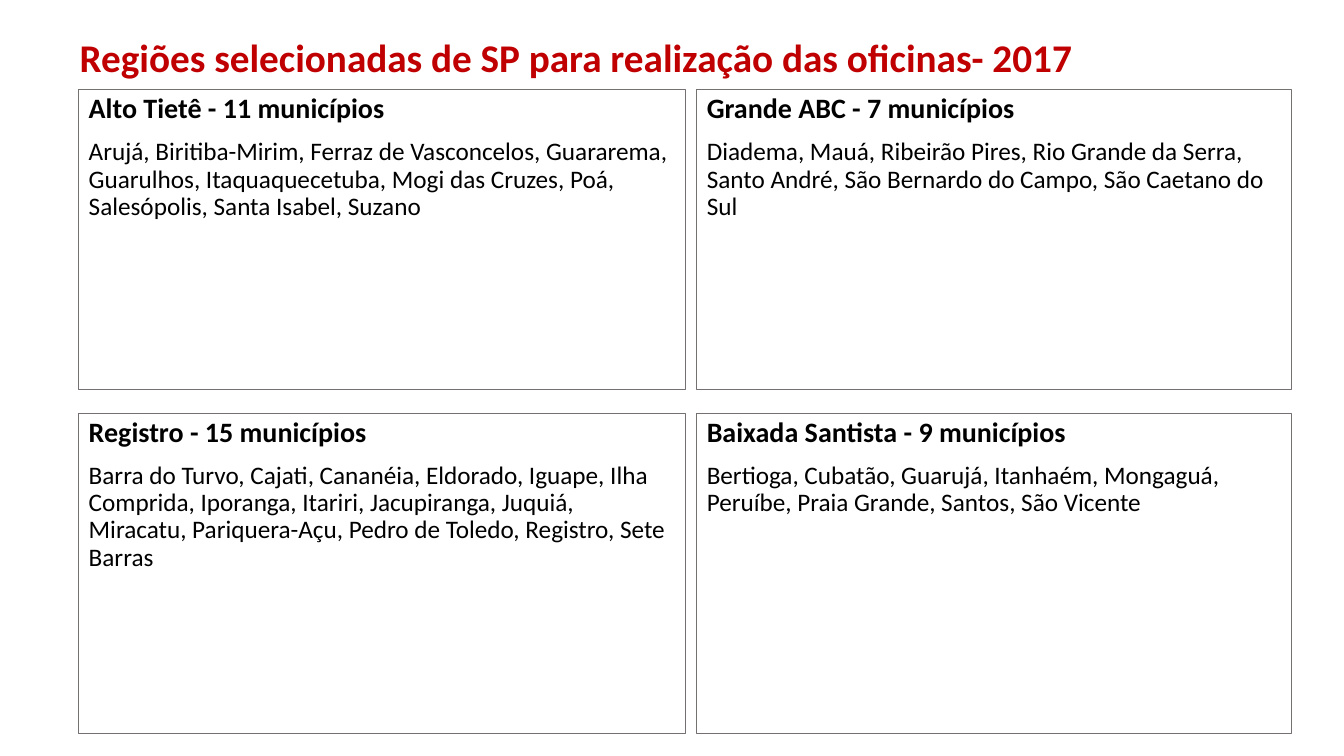
from lxml import etree
from pptx import Presentation
from pptx.dml.color import RGBColor
from pptx.enum.text import MSO_ANCHOR, MSO_AUTO_SIZE, PP_ALIGN
from pptx.oxml.ns import qn
from pptx.util import Inches, Pt

TOP, MIDDLE = MSO_ANCHOR.TOP, MSO_ANCHOR.MIDDLE
NO_FIT = MSO_AUTO_SIZE.NONE
LEFT = PP_ALIGN.LEFT

TITLE = "Regiões selecionadas de SP para realização das oficinas- 2017"
REGIONS = [
    ("Alto Tietê - 11 municípios",
     "Arujá, Biritiba-Mirim, Ferraz de Vasconcelos, Guararema, Guarulhos, "
     "Itaquaquecetuba, Mogi das Cruzes, Poá, Salesópolis, Santa Isabel, Suzano"),
    ("Grande ABC - 7 municípios",
     "Diadema, Mauá, Ribeirão Pires, Rio Grande da Serra, Santo André, "
     "São Bernardo do Campo, São Caetano do Sul"),
    ("Registro - 15 municípios",
     "Barra do Turvo, Cajati, Cananéia, Eldorado, Iguape, Ilha Comprida, "
     "Iporanga, Itariri, Jacupiranga, Juquiá, Miracatu, Pariquera-Açu, "
     "Pedro de Toledo, Registro, Sete Barras"),
    ("Baixada Santista - 9 municípios",
     "Bertioga, Cubatão, Guarujá, Itanhaém, Mongaguá, Peruíbe, "
     "Praia Grande, Santos, São Vicente"),
]

# Inches: (start, length) of each grid column and row
COLUMNS = [(0.78, 6.02), (6.91, 5.9)]
ROWS = [(0.89, 2.97), (4.1, 3.18)]
TITLE_PLACE = (0.69, 0.41, 10.07, 0.37)

TITLE_FONT = {"size": Pt(28), "bold": True}
HEADING_FONT = {"size": Pt(20), "bold": True}
LIST_FONT = {"size": Pt(18), "bold": False}
COMPARISON_LAYOUT = 4  # a title and four body placeholders


def color(hex_code):
    return RGBColor.from_string(hex_code)


def place(box, left, top, width, height):
    box.left, box.top = Inches(left), Inches(top)
    box.width, box.height = Inches(width), Inches(height)


def write(box, lines, anchor, space_before, hex_code):
    """Fill a placeholder with (text, font format) lines, without bullets."""
    frame = box.text_frame
    frame.word_wrap = True
    frame.auto_size = NO_FIT
    frame.vertical_anchor = anchor
    for number, (text, font_format) in enumerate(lines):
        para = frame.add_paragraph() if number else frame.paragraphs[0]
        para.alignment = LEFT
        para.line_spacing = 0.9
        para.space_before = Pt(space_before)
        properties = para._p.get_or_add_pPr()
        properties.set("marL", "0")
        properties.set("indent", "0")
        etree.SubElement(properties, qn("a:buNone"))
        span = para.add_run()
        span.text = text
        span.font.name = "Calibri"
        span.font.color.rgb = color(hex_code)
        for name, value in font_format.items():
            setattr(span.font, name, value)


def main():
    deck = Presentation()
    deck.slide_width, deck.slide_height = Inches(13.33), Inches(7.5)
    page = deck.slides.add_slide(deck.slide_layouts[COMPARISON_LAYOUT])

    title, *boxes = page.placeholders
    place(title, *TITLE_PLACE)
    write(title, [(TITLE, TITLE_FONT)], MIDDLE, 0, "C00000")

    for index, (box, (heading, towns)) in enumerate(zip(boxes, REGIONS)):
        row, column = divmod(index, len(COLUMNS))
        left, width = COLUMNS[column]
        top, height = ROWS[row]
        place(box, left, top, width, height)
        box.line.color.rgb = color("767171")
        box.line.width = Pt(0.75)
        write(box, [(heading, HEADING_FONT), (towns, LIST_FONT)], TOP, 10, "000000")

    deck.save("out.pptx")


if __name__ == "__main__":
    main()
